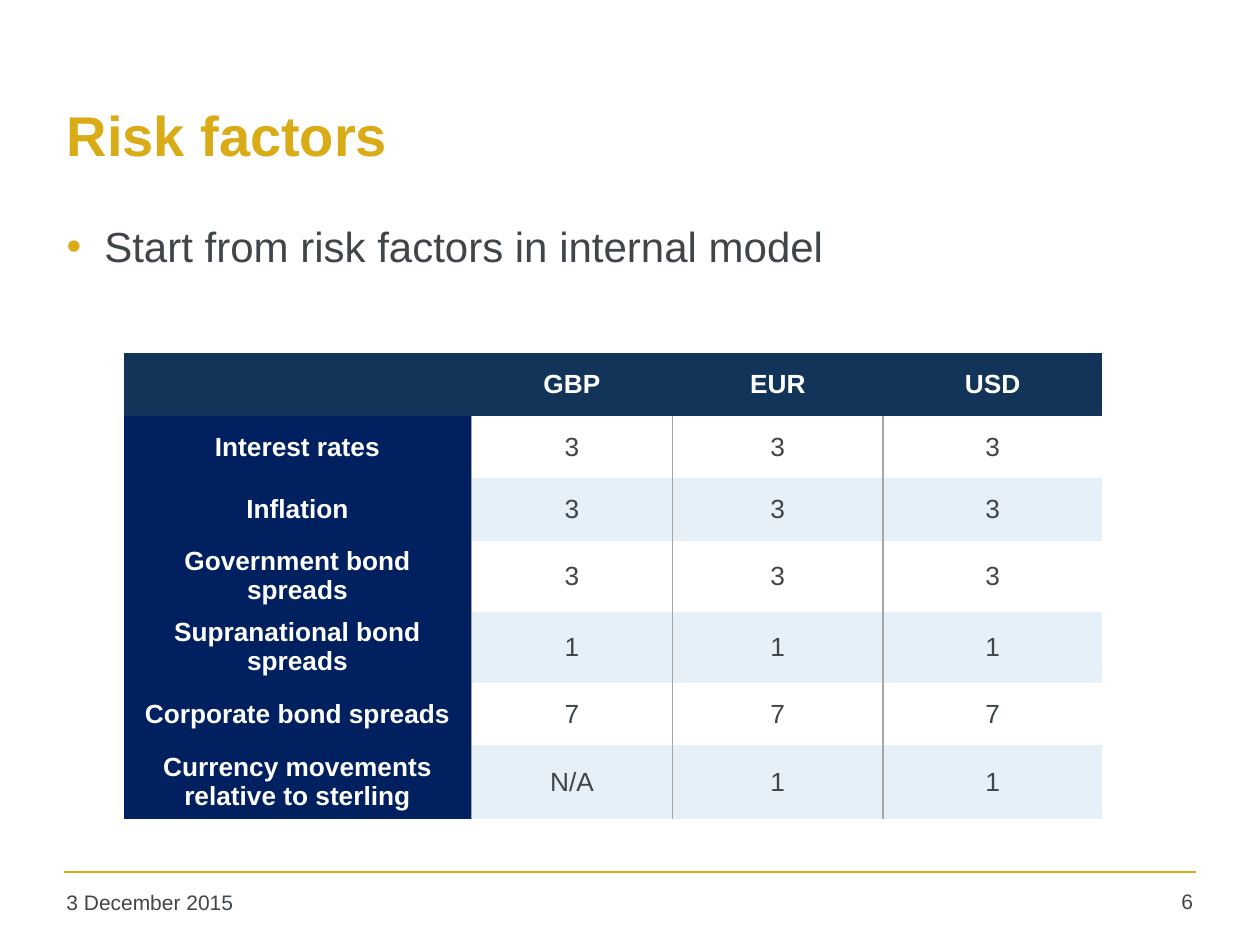
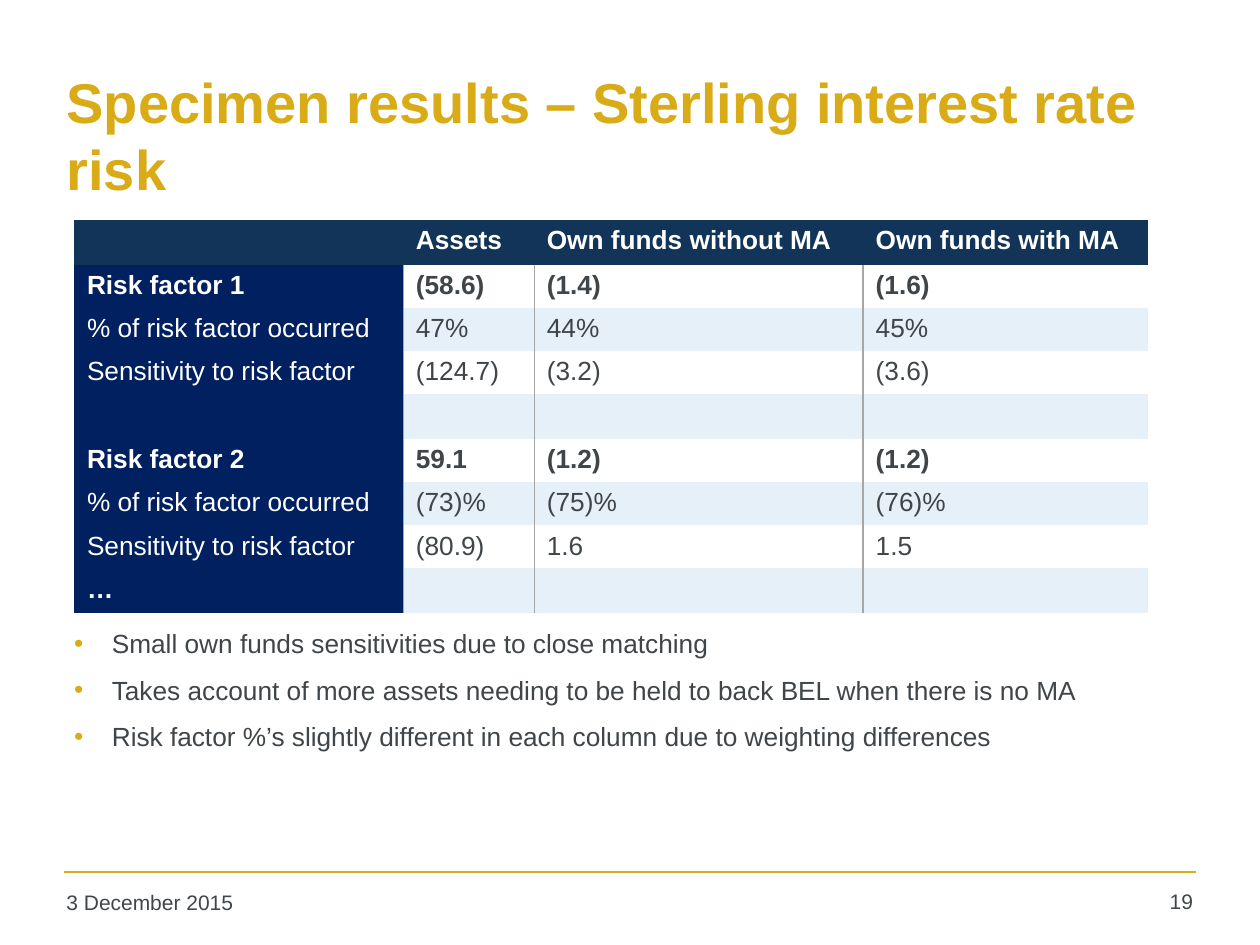
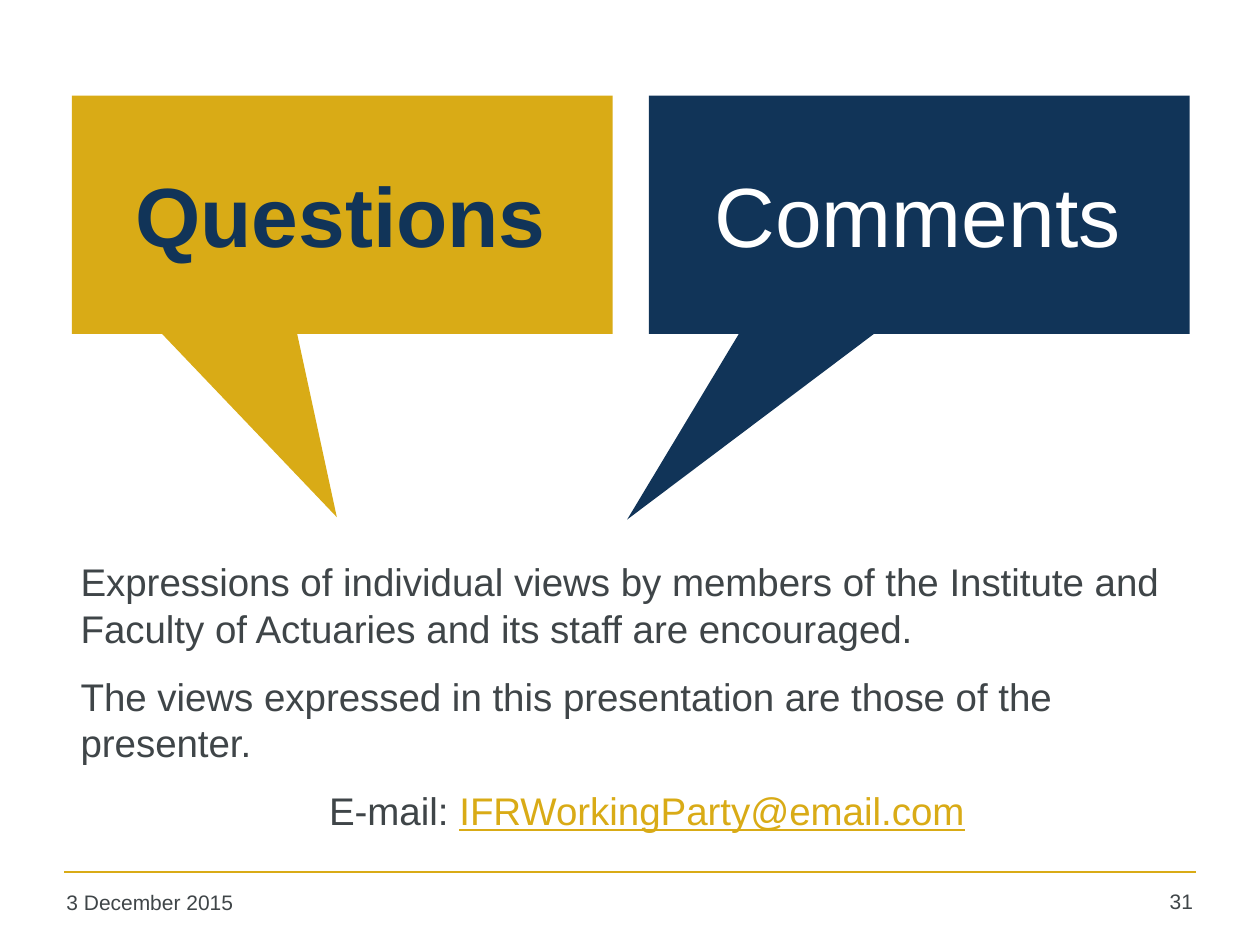
from lxml.etree import SubElement
from pptx import Presentation
from pptx.dml.color import RGBColor
from pptx.enum.shapes import MSO_CONNECTOR, MSO_SHAPE
from pptx.enum.text import MSO_ANCHOR, MSO_AUTO_SIZE, PP_ALIGN
from pptx.oxml.ns import qn
from pptx.util import Cm, Pt

GOLD = RGBColor(0xD9, 0xAB, 0x16)
NAVY = RGBColor(0x11, 0x34, 0x58)
DEEP_BLUE = RGBColor(0x00, 0x20, 0x60)
PALE_BLUE = RGBColor(0xE5, 0xF0, 0xF9)
GREY = RGBColor(0xA6, 0xA6, 0xA6)
TEXT = RGBColor(0x3F, 0x45, 0x48)
WHITE = RGBColor(0xFF, 0xFF, 0xFF)
FONT = "Arial"
NO_TABLE_STYLE = "{2D5ABB26-0587-4C30-8999-92F81FD0307C}"

# Boxes are (left, top, width, height) in centimetres.
TITLE_BOX = (1.09, 1.12, 23.04, 3.18)
DATE_BOX = (1.09, 17.81, 5.59, 0.91)
NUMBER_BOX = (22.5, 17.78, 1.8, 0.94)
RULE_LEFT, RULE_RIGHT, RULE_TOP = 1.3, 24.1, 17.58
DATE = "3 December 2015"

RISK_FACTORS = {
    "number": 6,
    "title": "Risk factors",
    "bullets": ["Start from risk factors in internal model"],
    "bullet_size": 24,
    "bullet_box": (1.09, 4.32, 23.04, 12.88),
    "table": {
        "position": (2.49, 7.12),
        "widths": [7.01, 4.06, 4.24, 4.42],
        "heights": [1.26] * 6 + [1.49],
        "alignment": PP_ALIGN.CENTER,
        "anchor": MSO_ANCHOR.MIDDLE,
        "bold_rows": {0},
        "bold_columns": {0},
        "rows": [
            ("", "GBP", "EUR", "USD"),
            ("Interest rates", "3", "3", "3"),
            ("Inflation", "3", "3", "3"),
            ("Government bond spreads", "3", "3", "3"),
            ("Supranational bond spreads", "1", "1", "1"),
            ("Corporate bond spreads", "7", "7", "7"),
            ("Currency movements relative to sterling", "N/A", "1", "1"),
        ],
    },
}

SPECIMEN_RESULTS = {
    "number": 19,
    "title": "Specimen results – Sterling interest rate risk",
    "bullets": [
        "Small own funds sensitivities due to close matching",
        "Takes account of more assets needing to be held to back BEL when there is no MA",
        "Risk factor %’s slightly different in each column due to weighting differences",
    ],
    "bullet_size": 15,
    "bullet_box": (1.24, 12.52, 23.04, 4.32),
    "table": {
        "position": (1.5, 4.43),
        "widths": [6.63, 2.64, 6.63, 5.74],
        "heights": [0.87] * 9,
        "alignment": PP_ALIGN.LEFT,
        "anchor": MSO_ANCHOR.TOP,
        "bold_rows": {0, 1, 5, 8},
        "bold_columns": set(),
        "rows": [
            ("", "Assets", "Own funds without MA", "Own funds with MA"),
            ("Risk factor 1", "(58.6)", "(1.4)", "(1.6)"),
            ("% of risk factor occurred", "47%", "44%", "45%"),
            ("Sensitivity to risk factor", "(124.7)", "(3.2)", "(3.6)"),
            ("", "", "", ""),
            ("Risk factor 2", "59.1", "(1.2)", "(1.2)"),
            ("% of risk factor occurred", "(73)%", "(75)%", "(76)%"),
            ("Sensitivity to risk factor", "(80.9)", "1.6", "1.5"),
            ("…", "", "", ""),
        ],
    },
}

CLOSING_NUMBER = 31
CLOSING_BOX = (1.37, 11.13, 23.34, 6.55)
CLOSING_STATEMENTS = [
    "Expressions of individual views by members of the Institute and Faculty of "
    "Actuaries and its staff are encouraged.",
    "The views expressed in this presentation are those of the presenter.",
    "E-mail: ",
]
EMAIL = "IFRWorkingParty@email.com"
CALLOUT_TOP, CALLOUT_WIDTH, CALLOUT_HEIGHT = 1.93, 10.9, 4.8
# Left edge, fill, and the tip of the pointer relative to the callout's centre
CALLOUTS = {
    "Questions": (1.45, GOLD, (-0.01, 1.27)),
    "Comments": (13.08, NAVY, (-0.54, 1.28)),
}


def lengths(box):
    return [Cm(value) for value in box]


def place(shape, box):
    shape.left, shape.top, shape.width, shape.height = lengths(box)


def format_runs(paragraph, size, color, bold=False):
    for run in paragraph.runs:
        run.font.name = FONT
        run.font.size = Pt(size)
        run.font.bold = bold
        run.font.color.rgb = color


def write_line(shape, text, size, color, bold=False, alignment=PP_ALIGN.LEFT,
               anchor=MSO_ANCHOR.TOP):
    """Fill a shape with one formatted paragraph."""
    frame = shape.text_frame
    frame.word_wrap = True
    frame.auto_size = MSO_AUTO_SIZE.NONE
    frame.vertical_anchor = anchor
    frame.text = text
    frame.paragraphs[0].alignment = alignment
    format_runs(frame.paragraphs[0], size, color, bold)


def set_bullet(paragraph, bulleted):
    properties = paragraph._p.get_or_add_pPr()
    indent = Cm(0.76) if bulleted else 0
    properties.set("marL", str(indent))
    properties.set("indent", str(-indent))
    if bulleted:
        color = SubElement(properties, qn("a:buClr"))
        SubElement(color, qn("a:srgbClr"), val=str(GOLD))
        SubElement(properties, qn("a:buFont"), typeface=FONT)
        SubElement(properties, qn("a:buChar"), char="•")
    else:
        SubElement(properties, qn("a:buNone"))


def fill_body(body, box, texts, size, bulleted):
    place(body, box)
    frame = body.text_frame
    frame.text = "\n".join(texts)
    frame.auto_size = MSO_AUTO_SIZE.NONE
    for index, paragraph in enumerate(frame.paragraphs):
        set_bullet(paragraph, bulleted)
        # Half a line between paragraphs
        paragraph.space_before = Pt(round(size * 0.575, 1) if index else 0)
        format_runs(paragraph, size, TEXT)


def add_slide(presentation, number):
    """Add a slide with the footer rule, the date and its number."""
    slide = presentation.slides.add_slide(presentation.slide_layouts[1])
    rule = slide.shapes.add_connector(
        MSO_CONNECTOR.STRAIGHT,
        *lengths((RULE_LEFT, RULE_TOP, RULE_RIGHT, RULE_TOP)))
    rule.line.color.rgb = GOLD
    rule.line.width = Pt(1)
    SubElement(rule.element.spPr, qn("a:effectLst"))
    for box, text, alignment in (
        (DATE_BOX, DATE, PP_ALIGN.LEFT),
        (NUMBER_BOX, str(number), PP_ALIGN.RIGHT),
    ):
        footer = slide.shapes.add_textbox(*lengths(box))
        write_line(footer, text, 12, TEXT, alignment=alignment)
    return slide


def add_border(cell, side):
    properties = cell._tc.get_or_add_tcPr()
    line = SubElement(properties, qn(f"a:ln{side}"), w=str(Pt(1)))
    fill = SubElement(line, qn("a:solidFill"))
    SubElement(fill, qn("a:srgbClr"), val=str(GREY))


def cell_fill(row, column):
    if row == 0:
        return NAVY
    if column == 0:
        return DEEP_BLUE
    return WHITE if row % 2 else PALE_BLUE


def add_risk_table(slide, content):
    rows, widths, heights = content["rows"], content["widths"], content["heights"]
    box = (*content["position"], sum(widths), sum(heights))
    frame = slide.shapes.add_table(len(rows), len(widths), *lengths(box))
    for style in frame.element.iter(qn("a:tableStyleId")):
        style.text = NO_TABLE_STYLE
    table = frame.table
    table.first_row = table.horz_banding = False
    for column, width in zip(table.columns, widths):
        column.width = Cm(width)
    for row, height in zip(table.rows, heights):
        row.height = Cm(height)

    for row, texts in enumerate(rows):
        for column, text in enumerate(texts):
            cell = table.cell(row, column)
            if row and column:
                add_border(cell, "L")
            if row and column < len(widths) - 1:
                add_border(cell, "R")
            cell.fill.solid()
            cell.fill.fore_color.rgb = cell_fill(row, column)
            cell.vertical_anchor = content["anchor"]
            cell.text = text
            paragraph = cell.text_frame.paragraphs[0]
            paragraph.alignment = content["alignment"]
            bold = row in content["bold_rows"] or column in content["bold_columns"]
            color = TEXT if row and column else WHITE
            format_runs(paragraph, 15, color, bold)
            if not text:
                SubElement(paragraph._p, qn("a:endParaRPr"), sz="1500")


def add_table_slide(presentation, content):
    slide = add_slide(presentation, content["number"])
    title, body = slide.placeholders
    place(title, TITLE_BOX)
    write_line(title, content["title"], 32, GOLD, bold=True, anchor=MSO_ANCHOR.MIDDLE)
    fill_body(body, content["bullet_box"], content["bullets"],
              content["bullet_size"], bulleted=True)
    add_risk_table(slide, content["table"])


def add_callout(slide, left, color, tip):
    box = (left, CALLOUT_TOP, CALLOUT_WIDTH, CALLOUT_HEIGHT)
    callout = slide.shapes.add_shape(MSO_SHAPE.RECTANGULAR_CALLOUT, *lengths(box))
    callout.adjustments[0], callout.adjustments[1] = tip
    callout.shadow.inherit = False
    callout.fill.solid()
    callout.fill.fore_color.rgb = color
    callout.line.fill.background()


def add_closing_slide(presentation):
    slide = add_slide(presentation, CLOSING_NUMBER)
    title, body = slide.placeholders
    fill_body(body, CLOSING_BOX, CLOSING_STATEMENTS, 22, bulleted=False)
    contact = body.text_frame.paragraphs[-1]
    contact.alignment = PP_ALIGN.CENTER
    address = contact.add_run()
    address.text = EMAIL
    format_runs(contact, 22, TEXT)
    address.font.color.rgb = GOLD
    address.font.underline = True

    for callout in CALLOUTS.values():
        add_callout(slide, *callout)
    # Bring the title in front of its callout
    title.element.getparent().append(title.element)
    comments = slide.shapes.add_textbox(0, 0, 0, 0)
    labels = ((title, NAVY, True), (comments, WHITE, False))
    for (text, (left, *_)), (label, color, bold) in zip(CALLOUTS.items(), labels):
        place(label, (left + 0.53, CALLOUT_TOP + 0.8, 9.78, 3.18))
        write_line(label, text, 48, color, bold, PP_ALIGN.CENTER, MSO_ANCHOR.MIDDLE)


def main():
    presentation = Presentation()
    presentation.slide_width = Cm(25.4)
    presentation.slide_height = Cm(19.05)
    for content in (RISK_FACTORS, SPECIMEN_RESULTS):
        add_table_slide(presentation, content)
    add_closing_slide(presentation)
    presentation.save("out.pptx")


if __name__ == "__main__":
    main()
